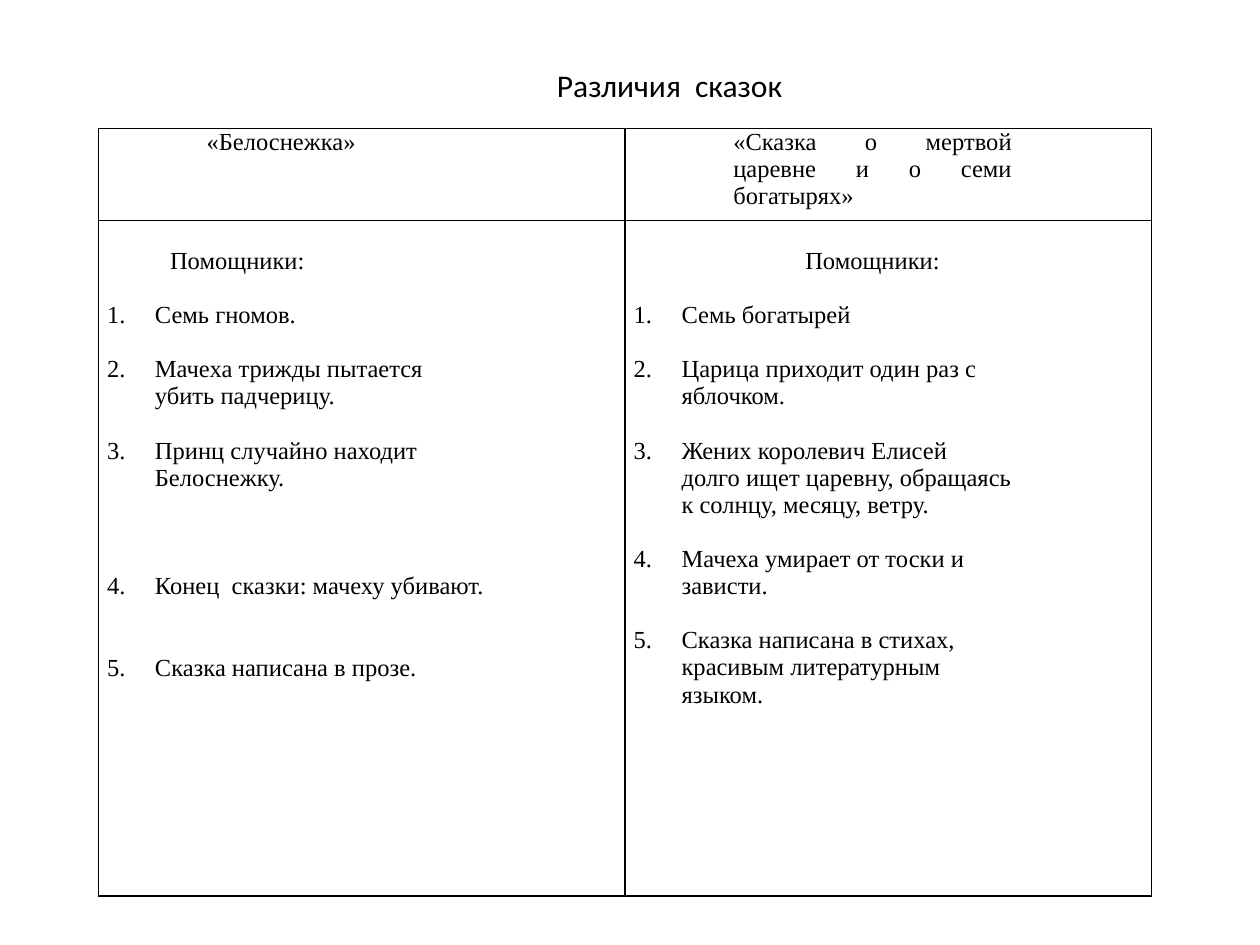
from lxml.etree import SubElement
from pptx import Presentation
from pptx.dml.color import RGBColor
from pptx.enum.text import MSO_AUTO_SIZE, PP_ALIGN
from pptx.oxml.ns import qn
from pptx.util import Inches, Pt

COLORS = {"ink": "000000", "paper": "FFFFFF"}
BODY_FONT = "Times New Roman"
LINE = 15.5  # height of one 14 pt line, in points
RIGHT_INDENT = 1.04

# Each item: text and the number of empty lines above it
TALES = [
    {
        "name": "«Белоснежка»",
        "heading": {"indent": 0.5},
        "items": [
            ("Семь гномов.", 1),
            ("Мачеха трижды пытается убить падчерицу.", 1),
            ("Принц случайно находит Белоснежку.", 1),
            ("Конец  сказки: мачеху убивают.", 3),
            ("Сказка написана в прозе.", 2),
        ],
    },
    {
        "name": "«Сказка о мертвой царевне и о семи богатырях»",
        "heading": {"indent": 0.79, "align": PP_ALIGN.CENTER},
        "items": [
            ("Семь богатырей", 1),
            ("Царица приходит один раз с яблочком.", 1),
            ("Жених королевич Елисей долго ищет царевну, "
             "обращаясь к солнцу, месяцу, ветру.", 1),
            ("Мачеха умирает от тоски и зависти.", 1),
            ("Сказка написана в стихах, красивым литературным языком.", 1),
        ],
    },
]


def write(para, text, font=BODY_FONT, size=14, align=PP_ALIGN.LEFT,
          indent=0, hanging=0, right=0, before=0, numbered=False):
    """Fill a paragraph with text in the given format."""
    para.alignment = align
    para.space_before = Pt(before)
    props = para._p.get_or_add_pPr()
    props.set("marL", str(Inches(indent)))
    props.set("indent", str(-Inches(hanging)))
    props.set("marR", str(Inches(right)))
    if numbered:
        SubElement(props, qn("a:buFont"), typeface="+mj-lt")
        SubElement(props, qn("a:buAutoNum"), type="arabicPeriod")
    else:
        SubElement(props, qn("a:buNone"))
    span = para.add_run()
    span.text = text
    span.font.name = font
    span.font.size = Pt(size)
    span.font.color.rgb = RGBColor.from_string(COLORS["ink"])


def add_title(page, text):
    title = page.shapes.title
    title.left, title.top = Inches(2.11), Inches(0.47)
    title.width, title.height = Inches(6.41), Inches(0.4)
    frame = title.text_frame
    frame.word_wrap = True
    frame.auto_size = MSO_AUTO_SIZE.NONE
    write(frame.paragraphs[0], text, font="Calibri", size=18,
          align=PP_ALIGN.CENTER)


def style_cell(cell, top=0):
    """Set margins, black borders and a plain fill."""
    cell.margin_left = cell.margin_right = Inches(0.07)
    cell.margin_top, cell.margin_bottom = Pt(top), 0
    props = cell._tc.get_or_add_tcPr()
    for side in ("lnL", "lnR", "lnT", "lnB"):
        border = SubElement(props, qn(f"a:{side}"), w=str(Pt(1)))
        fill = SubElement(border, qn("a:solidFill"))
        SubElement(fill, qn("a:srgbClr"), val=COLORS["ink"])
    cell.fill.solid()
    cell.fill.fore_color.rgb = RGBColor.from_string(COLORS["paper"])


def fill_column(table, column, tale):
    # Name of the tale
    header = table.cell(0, column)
    style_cell(header)
    write(header.text_frame.paragraphs[0], tale["name"],
          align=PP_ALIGN.JUSTIFY, indent=0.79, right=RIGHT_INDENT)

    # Heading and numbered differences
    body = table.cell(1, column)
    style_cell(body, top=LINE)
    frame = body.text_frame
    write(frame.paragraphs[0], "Помощники:", right=RIGHT_INDENT,
          **tale["heading"])
    for text, lines_above in tale["items"]:
        write(frame.add_paragraph(), text, indent=0.38, hanging=0.38,
              right=RIGHT_INDENT, before=lines_above * LINE, numbered=True)


def add_comparison(page):
    table = page.shapes.add_table(
        2, len(TALES), Inches(0.78), Inches(1.02),
        Inches(8.36), Inches(6.09)).table
    table.first_row = table.horz_banding = False
    for row, height in zip(table.rows, (0.73, 5.36)):
        row.height = Inches(height)
    for column, tale in enumerate(TALES):
        fill_column(table, column, tale)


def main():
    deck = Presentation()
    deck.slide_width, deck.slide_height = Inches(10), Inches(7.5)
    page = deck.slides.add_slide(deck.slide_layouts[5])
    add_title(page, "Различия  сказок")
    add_comparison(page)
    deck.save("out.pptx")


if __name__ == "__main__":
    main()
